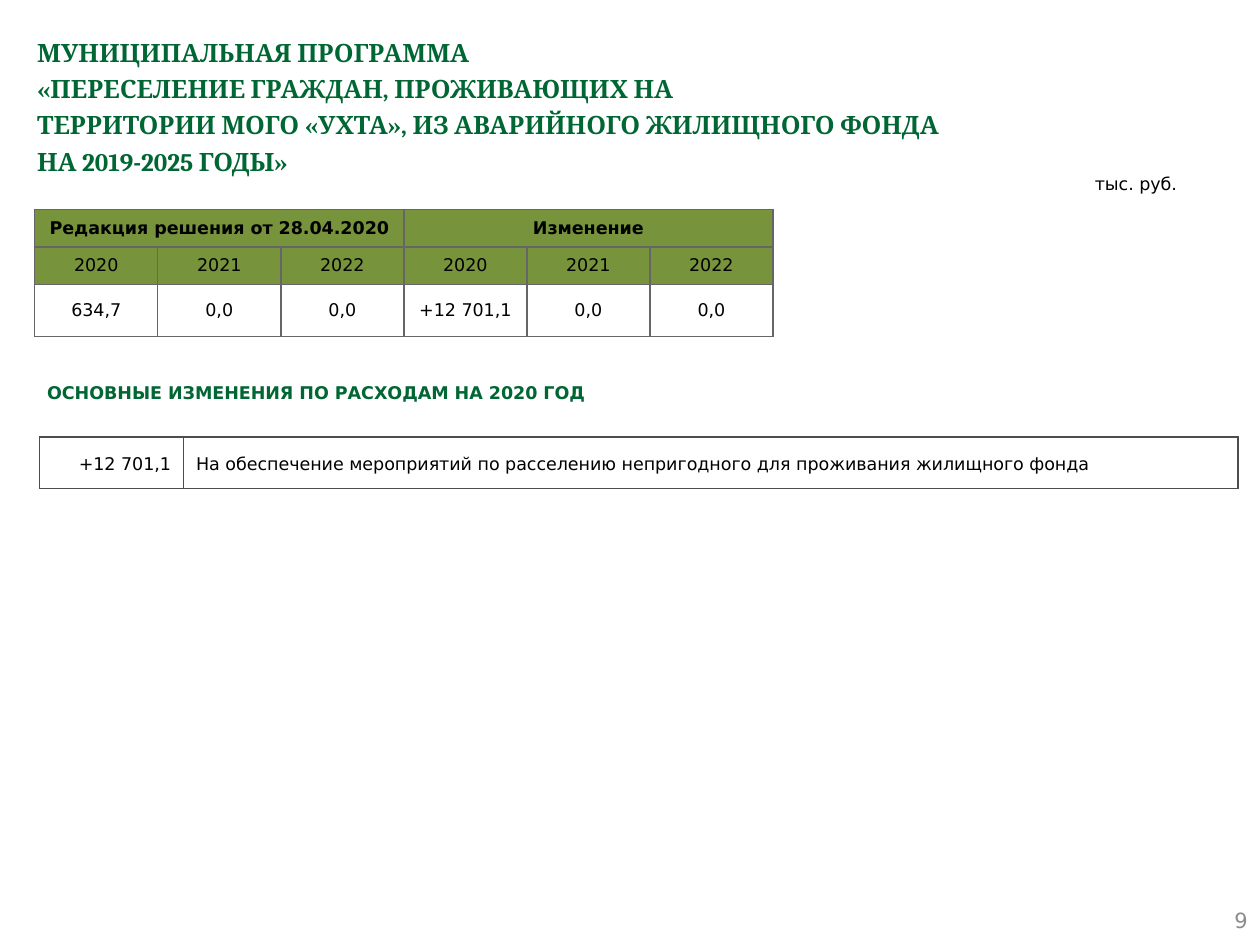
"""Build the slide on the resettlement programme's budget changes."""
from dataclasses import dataclass
from typing import Optional

from lxml.etree import SubElement
from pptx import Presentation
from pptx.dml.color import RGBColor
from pptx.enum.shapes import MSO_SHAPE
from pptx.enum.text import MSO_ANCHOR as Anchor, PP_ALIGN as Align
from pptx.oxml.ns import qn
from pptx.util import Cm, Pt

GREEN, OLIVE, BLACK, GREY = "006633", "77933C", "000000", "8C8C8C"
SANS, SERIF = "DejaVu Sans", "Cambria"


@dataclass(frozen=True)
class Style:
    size: float = 10
    color: str = BLACK
    bold: bool = False
    font: str = SANS
    align: Align = Align.LEFT
    spacing: float = 1.0
    after: float = 0


@dataclass(frozen=True)
class Box:
    left: float
    top: float
    width: float
    height: float

    def lengths(self) -> tuple:
        return Cm(self.left), Cm(self.top), Cm(self.width), Cm(self.height)


@dataclass(frozen=True)
class CellSpec:
    text: str
    style: Style
    fill: Optional[str] = None
    span: int = 1


def rgb(color: str) -> RGBColor:
    return RGBColor.from_string(color)


def write(tf, lines: list[str], style: Style) -> None:
    p = tf.paragraphs[0]
    p.alignment, p.line_spacing = style.align, style.spacing
    p.space_after = Pt(style.after)
    for i, line in enumerate(lines):
        if i:
            p.add_line_break()
        r = p.add_run()
        r.text = line
        r.font.size, r.font.name, r.font.bold = Pt(style.size), style.font, style.bold
        r.font.color.rgb = rgb(style.color)


def add_text(s, box: Box, lines: list[str], style: Style, anchor: Anchor = Anchor.TOP) -> None:
    tf = s.shapes.add_textbox(*box.lengths()).text_frame
    tf.word_wrap, tf.vertical_anchor = True, anchor
    write(tf, lines, style)


def add_heading(s, box: Box, text: str, style: Style) -> None:
    sp = s.shapes.add_shape(MSO_SHAPE.PENTAGON, *box.lengths())
    sp.adjustments[0] = 0
    sp.shadow.inherit = False
    sp.fill.background()
    sp.line.fill.background()
    sp.text_frame.word_wrap = True
    sp.text_frame.vertical_anchor = Anchor.MIDDLE
    write(sp.text_frame, [text], style)


def set_borders(cell, color: str) -> None:
    tcPr = cell._tc.get_or_add_tcPr()
    for side in ("a:lnL", "a:lnR", "a:lnT", "a:lnB"):
        ln = SubElement(tcPr, qn(side), w=str(Pt(1)))
        SubElement(SubElement(ln, qn("a:solidFill")), qn("a:srgbClr"), val=color)


def add_table(s, left: float, top: float, widths: list[float], heights: list[float],
              rows: list[list[CellSpec]], border: str, inset: Optional[float] = None) -> None:
    box = Box(left, top, sum(widths), sum(heights))
    tbl = s.shapes.add_table(len(heights), len(widths), *box.lengths()).table
    tbl.first_row = tbl.horz_banding = False
    for col, width in zip(tbl.columns, widths):
        col.width = Cm(width)
    for row, height in zip(tbl.rows, heights):
        row.height = Cm(height)
    for cell in tbl.iter_cells():
        set_borders(cell, border)
        cell.fill.background()
    for i, specs in enumerate(rows):
        j = 0
        for spec in specs:
            cell = tbl.cell(i, j)
            if spec.span > 1:
                cell.merge(tbl.cell(i, j + spec.span - 1))
            if spec.fill:
                cell.fill.solid()
                cell.fill.fore_color.rgb = rgb(spec.fill)
            cell.vertical_anchor = Anchor.MIDDLE
            if inset is not None:
                cell.margin_left = cell.margin_right = Cm(inset)
                cell.margin_top = cell.margin_bottom = Cm(inset)
            write(cell.text_frame, [spec.text], spec.style)
            j += spec.span


def main() -> None:
    prs = Presentation()
    prs.slide_width, prs.slide_height = Cm(25.4), Cm(19.05)
    s = prs.slides.add_slide(prs.slide_layouts[6])

    title = [
        "МУНИЦИПАЛЬНАЯ ПРОГРАММА ",
        "«ПЕРЕСЕЛЕНИЕ ГРАЖДАН, ПРОЖИВАЮЩИХ НА ",
        "ТЕРРИТОРИИ МОГО «УХТА», ИЗ АВАРИЙНОГО ЖИЛИЩНОГО ФОНДА",
        "НА 2019-2025 ГОДЫ»",
    ]
    add_text(s, Box(0.5, 0.5, 24.4, 2), title,
             Style(14.4, GREEN, True, SERIF, spacing=1.2))
    add_text(s, Box(19.48, 18.03, 5.92, 1.02), ["9"],
             Style(12, GREY, align=Align.RIGHT), Anchor.MIDDLE)
    add_heading(s, Box(0.7, 7.37, 12.5, 1.09),
                "ОСНОВНЫЕ ИЗМЕНЕНИЯ ПО РАСХОДАМ НА 2020 ГОД",
                Style(color=GREEN, bold=True))

    change = [
        CellSpec("+12 701,1", Style(align=Align.RIGHT, spacing=1.15, after=10)),
        CellSpec("На обеспечение мероприятий по расселению непригодного "
                 "для проживания жилищного фонда", Style(spacing=1.15, after=10)),
    ]
    add_table(s, 0.8, 8.81, [2.9, 21.26], [1.04], [change], "4D4D4D")
    add_text(s, Box(21.82, 3.28, 2.57, 0.76), ["тыс. руб."], Style(spacing=1.2))

    centred = Style(align=Align.CENTER)
    header = Style(bold=True, align=Align.CENTER)
    budget = [
        [CellSpec(t, header, OLIVE, 3) for t in ("Редакция решения от 28.04.2020", "Изменение")],
        [CellSpec(year, centred, OLIVE) for year in ("2020", "2021", "2022") * 2],
        [CellSpec(v, centred) for v in ("634,7", "0,0", "0,0", "+12 701,1", "0,0", "0,0")],
    ]
    add_table(s, 0.7, 4.22, [2.48] * 6, [0.76, 0.76, 1.04], budget, "666666", 0.13)
    prs.save("out.pptx")


if __name__ == "__main__":
    main()
